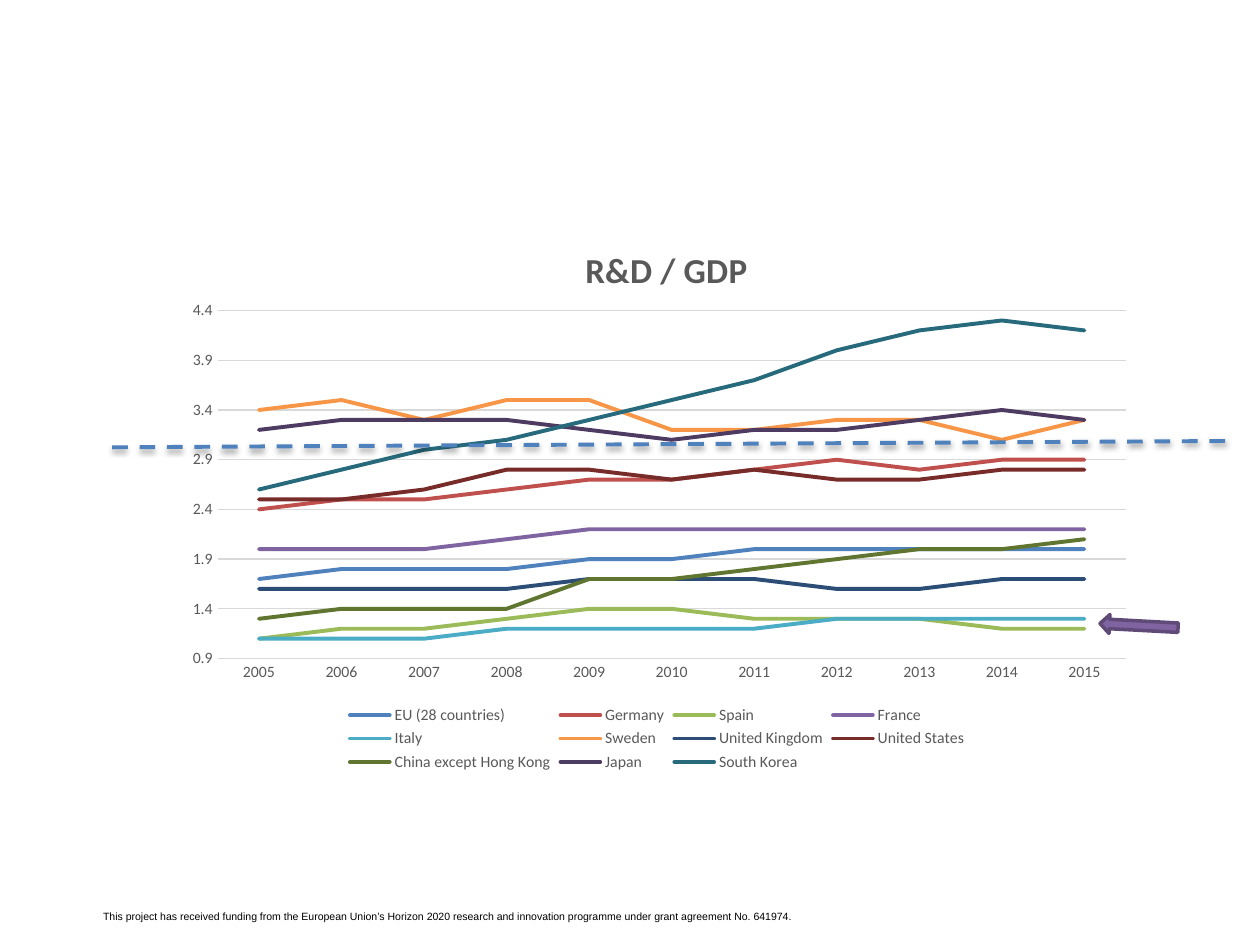
import pptx
import pptx.util
import pptx.chart.data
import pptx.dml.color
import pptx.enum.chart
import pptx.enum.dml
import pptx.enum.shapes
import pptx.oxml
import pptx.oxml.ns

Pt = pptx.util.Pt
qn = pptx.oxml.ns.qn
WIDE, HIGH = pptx.util.Inches(10), pptx.util.Inches(7.5)
COLS, ROWS = 100, 75
GREY, RULE = "595959", "D9D9D9"
YEARS = [str(year) for year in range(2005, 2016)]
LANDS = [
    ("EU (28 countries)", "4F81BD", [1.7, 1.8, 1.8, 1.8, 1.9, 1.9, 2, 2, 2, 2, 2]),
    ("Germany", "C0504D", [2.4, 2.5, 2.5, 2.6, 2.7, 2.7, 2.8, 2.9, 2.8, 2.9, 2.9]),
    ("Spain", "9BBB59", [1.1, 1.2, 1.2, 1.3, 1.4, 1.4, 1.3, 1.3, 1.3, 1.2, 1.2]),
    ("France", "8064A2", [2, 2, 2, 2.1, 2.2, 2.2, 2.2, 2.2, 2.2, 2.2, 2.2]),
    ("Italy", "4BACC6", [1.1, 1.1, 1.1, 1.2, 1.2, 1.2, 1.2, 1.3, 1.3, 1.3, 1.3]),
    ("Sweden", "F79646", [3.4, 3.5, 3.3, 3.5, 3.5, 3.2, 3.2, 3.3, 3.3, 3.1, 3.3]),
    ("United Kingdom", "2C4D75", [1.6, 1.6, 1.6, 1.6, 1.7, 1.7, 1.7, 1.6, 1.6, 1.7, 1.7]),
    ("United States", "772C2A", [2.5, 2.5, 2.6, 2.8, 2.8, 2.7, 2.8, 2.7, 2.7, 2.8, 2.8]),
    ("China except Hong Kong", "5F7530", [1.3, 1.4, 1.4, 1.4, 1.7, 1.7, 1.8, 1.9, 2, 2, 2.1]),
    ("Japan", "4D3B62", [3.2, 3.3, 3.3, 3.3, 3.2, 3.1, 3.2, 3.2, 3.3, 3.4, 3.3]),
    ("South Korea", "276A7C", [2.6, 2.8, 3, 3.1, 3.3, 3.5, 3.7, 4, 4.2, 4.3, 4.2]),
]


def grid(left, top, wide, high):
    col, row = WIDE / COLS, HIGH / ROWS
    return [round(n) for n in (left * col, top * row, wide * col, high * row)]


def tint(color, code):
    color.rgb = pptx.dml.color.RGBColor.from_string(code)


def style(part, form):
    for key, value in form.items():
        setattr(part, key, value)


def ink(font, size, code, name="Calibri", bold=False):
    style(font, {"size": Pt(size), "name": name, "bold": bold})
    tint(font.color, code)


def stroke(line, code, width):
    tint(line.color, code)
    line.width = Pt(width)


def locate(part, index, **shares):
    for old in part.findall(qn("c:layout")):
        part.remove(old)
    rows = "".join(f'<c:{key} val="{value}"/>' for key, value in shares.items())
    part.insert(index, pptx.oxml.parse_xml(
        f'<c:layout {pptx.oxml.ns.nsdecls("c")}><c:manualLayout>{rows}</c:manualLayout></c:layout>'))


def trend(slide, box):
    data = pptx.chart.data.CategoryChartData(number_format="0.0")
    data.categories = YEARS
    for name, code, values in LANDS:
        data.add_series(name, values)
    kind = pptx.enum.chart.XL_CHART_TYPE.LINE
    chart = slide.shapes.add_chart(kind, *box, data).chart
    ink(chart.font, 10, "000000")
    chart.has_title = True
    head = chart.chart_title.text_frame
    head.text = "R&D / GDP"
    ink(head.paragraphs[0].runs[0].font, 20, GREY, bold=True)
    locate(chart.chart_title._element, 1, xMode="edge", yMode="edge", x=0.42, y=0.04)
    locate(chart._chartSpace.chart.plotArea, 0, layoutTarget="inner", xMode="edge",
           yMode="edge", x=0.05, y=0.15, w=0.93, h=0.64)
    chart.has_legend = True
    style(chart.legend, {"position": pptx.enum.chart.XL_LEGEND_POSITION.BOTTOM,
                         "include_in_layout": False})
    ink(chart.legend.font, 9, GREY)
    none = pptx.enum.chart.XL_TICK_MARK.NONE
    years, ratio = chart.category_axis, chart.value_axis
    for axis in (years, ratio):
        style(axis, {"major_tick_mark": none, "minor_tick_mark": none})
        ink(axis.tick_labels.font, 9, GREY)
    stroke(years.format.line, RULE, 0.75)
    style(ratio, {"minimum_scale": 0.9, "maximum_scale": 4.5, "major_unit": 0.5,
                  "has_major_gridlines": True})
    style(ratio.tick_labels, {"number_format": "0.0", "number_format_is_linked": False})
    stroke(ratio.major_gridlines.format.line, RULE, 0.75)
    ratio.format.line.fill.background()
    chart.plots[0].vary_by_categories = False
    for land, (name, code, values) in zip(chart.plots[0].series, LANDS):
        land.smooth = False
        land.marker.style = pptx.enum.chart.XL_MARKER_STYLE.NONE
        stroke(land.format.line, code, 2.25)
        land.format.line._get_or_add_ln().set("cap", "rnd")


def target(slide, box):
    left, top, wide, high = box
    kind = pptx.enum.shapes.MSO_CONNECTOR.STRAIGHT
    line = slide.shapes.add_connector(kind, left, top + high, left + wide, top)
    stroke(line.line, "4F81BD", 2.25)
    line.line.dash_style = pptx.enum.dml.MSO_LINE.DASH
    line._element.spPr.append(pptx.oxml.parse_xml(
        f'<a:effectLst {pptx.oxml.ns.nsdecls("a")}>'
        f'<a:outerShdw blurRad="{Pt(3.1)}" dist="{Pt(1.6)}" dir="5400000" rotWithShape="0">'
        '<a:srgbClr val="000000"><a:alpha val="38000"/></a:srgbClr>'
        '</a:outerShdw></a:effectLst>'))


def arrow(slide, box):
    mark = slide.shapes.add_shape(pptx.enum.shapes.MSO_SHAPE.RIGHT_ARROW, *box)
    mark.shadow.inherit = False
    mark.rotation = 183.1
    mark.fill.solid()
    tint(mark.fill.fore_color, "8064A2")
    stroke(mark.line, "5F4A78", 2)


def footer(slide, box):
    frame = slide.shapes.add_textbox(*box).text_frame
    frame.word_wrap = True
    run = frame.paragraphs[0].add_run()
    run.text = ("This project has received funding from the European Union’s Horizon 2020 "
                "research and innovation programme under grant agreement No. 641974.")
    ink(run.font, 6, "000000", "Arial")


def main():
    deck = pptx.Presentation()
    style(deck, {"slide_width": WIDE, "slide_height": HIGH})
    slide = deck.slides.add_slide(deck.slide_layouts[6])
    footer(slide, grid(7.2, 71.7, 63, 4))
    trend(slide, grid(13.4, 17.2, 77.5, 44.4))
    target(slide, grid(8.9, 35, 88.4, 0.5))
    arrow(slide, grid(87.3, 48.9, 6.2, 1.5))
    deck.save("out.pptx")


if __name__ == "__main__":
    main()
